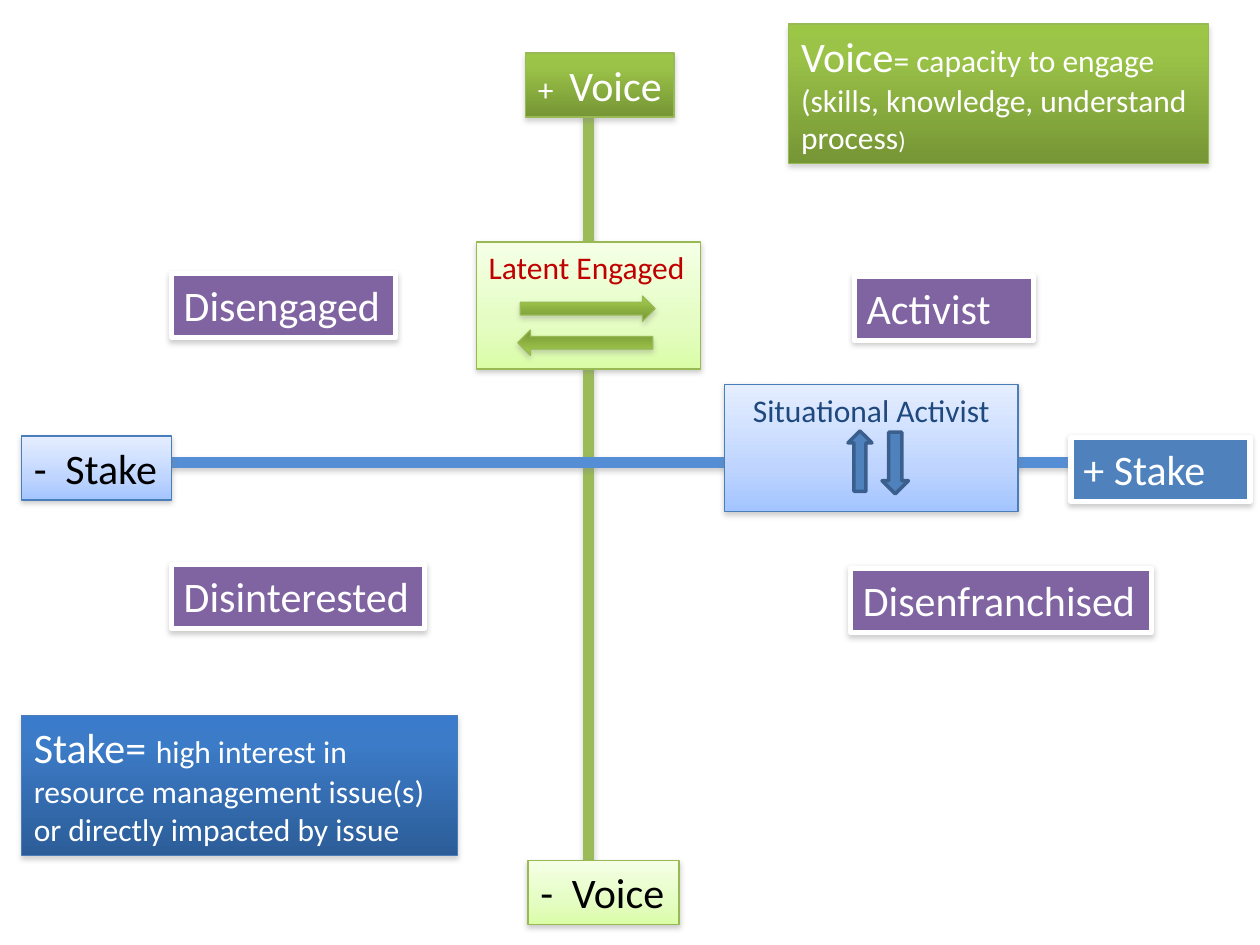
import pptx
import pptx.util
import pptx.dml.color
import pptx.enum.shapes
import pptx.enum.text
import pptx.oxml.ns
from lxml import etree

SHAPE = pptx.enum.shapes.MSO_SHAPE
ALIGN = pptx.enum.text.PP_ALIGN
SLIDE_W, SLIDE_H = 10, 7.5
AXIS_X, AXIS_Y = 4.67, 3.67
ROW_H, PANEL_H, NOTE_H = 0.51, 1.01, 1.11
SOFT_SHADOW, STRONG_SHADOW = (38, 1.6), (35, 1.8)

STYLES = {
    "green": (((0, "9CC746"), (20, "9BC348"), (100, "769535")), "98B954", 0.75, STRONG_SHADOW),
    "blue": (((0, "3A7CCB"), (20, "3C7BC7"), (100, "2C5D98")), "4A7EBB", 0.75, STRONG_SHADOW),
    "pale green": (((0, "F5FFE6"), (65, "E4FDC2"), (100, "DAFDA7")), "98B954", 0.75, SOFT_SHADOW),
    "pale blue": (((0, "E5EEFF"), (65, "BFD5FF"), (100, "A3C4FF")), "4A7EBB", 0.75, SOFT_SHADOW),
    "flat blue": ("4F81BD", "FFFFFF", 3, SOFT_SHADOW),
    "purple": ("8064A2", "FFFFFF", 3, SOFT_SHADOW),
    "outlined": ("4F81BD", "3A5F8C", 2, None),
}

AXES = [
    ((AXIS_X, 0.83), (AXIS_X, 6.92), "9BBB59"),
    ((0.67, AXIS_Y), (9, AXIS_Y), "558ED5"),
]

LABELS = [
    ((4.17, 0.42, 1.18, ROW_H), "green", "FFFFFF", [("+\t", 18), ("Voice", 24)]),
    ((4.19, 6.83, 1.2, ROW_H), "pale green", "000000", [("-\tVoice", 24)]),
    ((0.17, 3.46, 1.19, ROW_H), "pale blue", "000000", [("-\tStake", 24)]),
    ((8.5, 3.47, 1.42, ROW_H), "flat blue", "FFFFFF", [("+ Stake", 24)]),
    ((6.78, 2.19, 1.42, ROW_H), "purple", "FFFFFF", [("Activist", 24)]),
    ((6.75, 4.51, 2.39, ROW_H), "purple", "FFFFFF", [("Disenfranchised", 24)]),
    ((1.36, 4.48, 2.01, ROW_H), "purple", "FFFFFF", [("Disinterested", 24)]),
    ((1.36, 2.17, 1.78, ROW_H), "purple", "FFFFFF", [("Disengaged", 24)]),
    ((AXIS_X - 0.89, 1.92, 1.78, PANEL_H), "pale green", "C00000", [("Latent Engaged", 18)]),
]

SITUATIONAL = ((5.75, 3.05, 2.33, PANEL_H), "pale blue", "1F497D", [("Situational Activist", 18)])

DEFINITIONS = [
    ((6.26, 0.19, 3.33, NOTE_H), "green", "FFFFFF",
     [("Voice", 24), ("= capacity to engage (skills, knowledge, understand process", 18), (")", 14)]),
    ((0.17, 5.68, 3.46, NOTE_H), "blue", "FFFFFF",
     [("Stake= ", 24),
      ("high interest in resource management issue(s) or directly impacted by issue", 18)]),
]

ARROWS = [
    (SHAPE.UP_ARROW, (6.73, 3.42, 0.19, 0.48), "outlined", 0),
    (SHAPE.DOWN_ARROW, (7, 3.43, 0.21, 0.49), "outlined", 0),
    (SHAPE.RIGHT_ARROW, (4.13, 2.35, 1.07, 0.2), "green", 0),
    (SHAPE.RIGHT_ARROW, (4.11, 2.62, 1.07, 0.2), "green", 180),
]


def rgb(value):
    return pptx.dml.color.RGBColor.from_string(value)


def child(parent, tag, **attributes):
    return etree.SubElement(parent, pptx.oxml.ns.qn(tag),
                            {key: str(value) for key, value in attributes.items()})


def add_shadow(effects, alpha, distance):
    shadow = child(effects, "a:outerShdw", blurRad=pptx.util.Pt(3.1),
                   dist=pptx.util.Pt(distance), dir=90 * 60000, rotWithShape=0)
    child(child(shadow, "a:srgbClr", val="808080"), "a:alpha", val=alpha * 1000)


def add_styled(slide, preset, box, style):
    fill, outline, weight, shadow = STYLES[style]
    shape = slide.shapes.add_shape(preset, *map(pptx.util.Inches, box))
    properties = shape.element.spPr
    if isinstance(fill, str):
        shape.fill.solid()
        shape.fill.fore_color.rgb = rgb(fill)
    else:
        shape.fill.gradient()
        shape.fill.gradient_angle = 270
        stops = properties.find(".//" + pptx.oxml.ns.qn("a:gsLst"))
        for stop in list(stops):
            stops.remove(stop)
        for position, color in fill:
            child(child(stops, "a:gs", pos=position * 1000), "a:srgbClr", val=color)
    shape.line.color.rgb = rgb(outline)
    shape.line.width = pptx.util.Pt(weight)
    shape.shadow.inherit = False
    if shadow:
        add_shadow(properties.find(pptx.oxml.ns.qn("a:effectLst")), *shadow)
    return shape


def add_box(slide, box, style, color, runs, align=ALIGN.LEFT, right_inset=0.1):
    frame = add_styled(slide, SHAPE.RECTANGLE, box, style).text_frame
    frame.word_wrap = True
    frame.vertical_anchor = pptx.enum.text.MSO_ANCHOR.TOP
    frame.margin_right = pptx.util.Inches(right_inset)
    paragraph = frame.paragraphs[0]
    paragraph.alignment = align
    if "\t" in runs[0][0]:
        tabs = child(paragraph._p.get_or_add_pPr(), "a:tabLst")
        child(tabs, "a:tab", pos=pptx.util.Inches(0.25), algn="l")
    for text, size in runs:
        run = paragraph.add_run()
        run.text = text
        run.font.name = "Calibri"
        run.font.size = pptx.util.Pt(size)
        run.font.color.rgb = rgb(color)


def add_axis(slide, start, end, color):
    axis = slide.shapes.add_connector(pptx.enum.shapes.MSO_CONNECTOR.STRAIGHT,
                                      *map(pptx.util.Inches, start + end))
    axis.line.color.rgb = rgb(color)
    axis.line.width = pptx.util.Pt(6)
    add_shadow(child(axis.element.spPr, "a:effectLst"), *SOFT_SHADOW)


def main():
    deck = pptx.Presentation()
    deck.slide_width = pptx.util.Inches(SLIDE_W)
    deck.slide_height = pptx.util.Inches(SLIDE_H)
    slide = deck.slides.add_slide(deck.slide_layouts[6])
    for axis in AXES:
        add_axis(slide, *axis)
    for label in LABELS:
        add_box(slide, *label, right_inset=0)
    add_box(slide, *SITUATIONAL, align=ALIGN.CENTER)
    for definition in DEFINITIONS:
        add_box(slide, *definition)
    for preset, box, style, rotation in ARROWS:
        add_styled(slide, preset, box, style).rotation = rotation
    deck.save("out.pptx")


if __name__ == "__main__":
    main()
